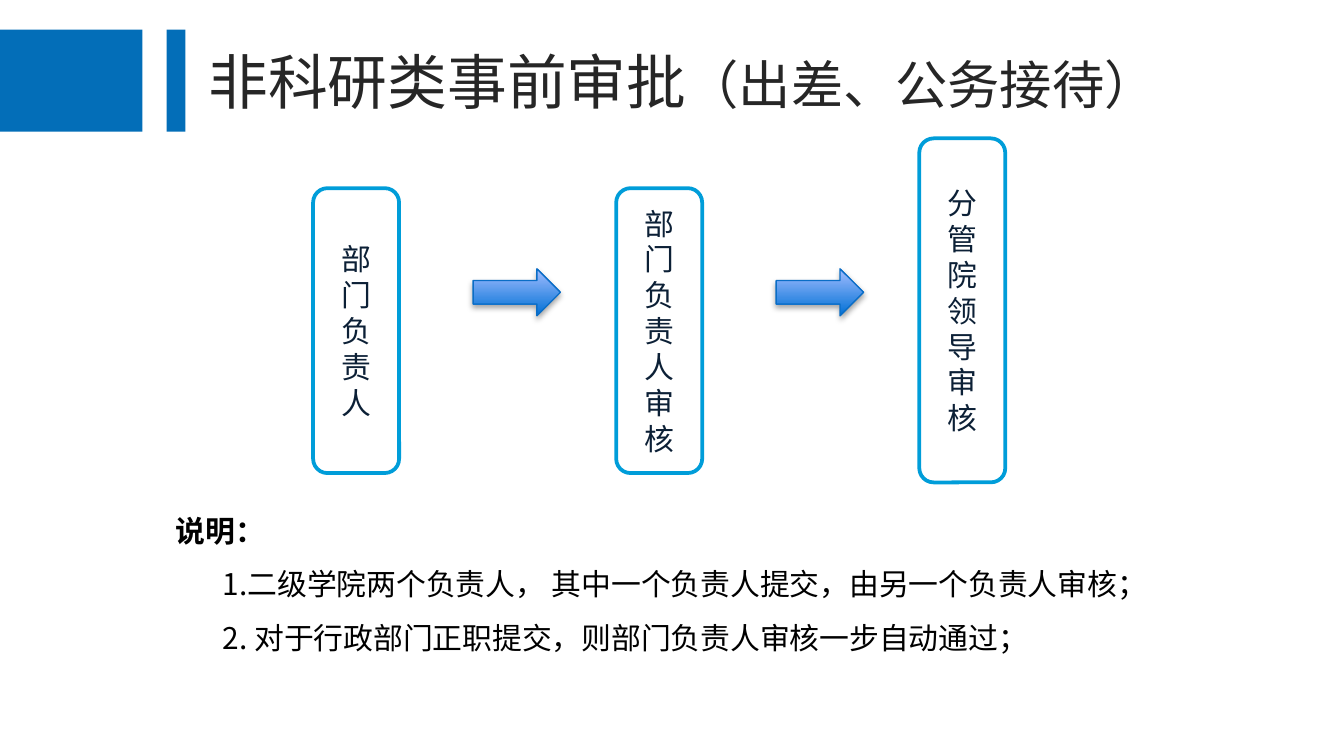
from lxml import etree
from pptx import Presentation
from pptx import util as u
from pptx.dml.color import RGBColor
from pptx.enum import shapes, text
from pptx.oxml import ns

COLORS = {
    "bar": "036EB8", "title": "262626", "white": "FFFFFF", "border": "009DD9",
    "step": "0C2036", "arrow_dark": "0070D5", "arrow_light": "A3BDFF",
    "arrow_line": "0A6DC6", "shadow": "000000", "note": "000000",
}
CJK, LATIN = "Noto Sans CJK SC", "League Spartan"


def color(name):
    return RGBColor.from_string(COLORS[name])


def place(item, left, top, width, height):
    item.left, item.top = u.Inches(left), u.Inches(top)
    item.width, item.height = u.Inches(width), u.Inches(height)


def add_shape(page, kind, left, top, width, height):
    shape = page.shapes.add_shape(kind, *map(u.Inches, (left, top, width, height)))
    shape.shadow.inherit = False
    return shape


def add_span(para, words, size, face, shade, bold=False):
    span = para.add_run()
    span.text = words
    span.font.size, span.font.bold, span.font.name = u.Pt(size), bold, face
    span.font.color.rgb = color(shade)
    east_asian = etree.Element(ns.qn("a:ea"), typeface=face)
    span.font._element.find(ns.qn("a:latin")).addnext(east_asian)


def add_header(page, left, top, width, height):
    for offset, bar_width in ((0, 1.06), (1.24, 0.14)):
        bar = add_shape(page, shapes.MSO_SHAPE.RECTANGLE,
                        left + offset, top, bar_width, height)
        bar.fill.solid()
        bar.fill.fore_color.rgb = color("bar")
        bar.line.fill.background()
    title = page.shapes.title
    place(title, left + 1.45, top + 0.06, width - 1.45, 0.64)
    frame = title.text_frame
    frame.word_wrap = True
    frame.auto_size = text.MSO_AUTO_SIZE.SHAPE_TO_FIT_TEXT
    frame.vertical_anchor = text.MSO_ANCHOR.TOP
    para = frame.paragraphs[0]
    para.alignment = text.PP_ALIGN.LEFT
    add_span(para, "非科研类事前审批", 32, CJK, "title")
    add_span(para, "（出差、公务接待）", 28, CJK, "title")


def add_step(page, words, left, top, width, height):
    box = add_shape(page, shapes.MSO_SHAPE.ROUNDED_RECTANGLE, left, top, width, height)
    box.fill.solid()
    box.fill.fore_color.rgb = color("white")
    box.line.color.rgb = color("border")
    box.line.width = u.Pt(2)
    frame = box.text_frame
    frame.word_wrap = True
    frame.vertical_anchor = text.MSO_ANCHOR.MIDDLE
    para = frame.paragraphs[0]
    para.alignment = text.PP_ALIGN.CENTER
    add_span(para, words, 16, LATIN, "step")


def add_arrow(page, left, top, width, height):
    arrow = add_shape(page, shapes.MSO_SHAPE.RIGHT_ARROW, left, top, width, height)
    arrow.fill.gradient()
    arrow.fill.gradient_angle = 90
    for stop, position, shade in zip(arrow.fill.gradient_stops, (0, 1),
                                     ("arrow_dark", "arrow_light")):
        stop.position = position
        stop.color.rgb = color(shade)
    arrow.line.color.rgb = color("arrow_line")
    arrow.line.width = u.Pt(0.75)
    effects = arrow._element.spPr.find(ns.qn("a:effectLst"))
    shadow = etree.SubElement(effects, ns.qn("a:outerShdw"), blurRad=str(u.Pt(3.1)),
                              dist=str(u.Pt(1.8)), dir="5400000", rotWithShape="0")
    shade = etree.SubElement(shadow, ns.qn("a:srgbClr"), val=COLORS["shadow"])
    etree.SubElement(shade, ns.qn("a:alpha"), val="35000")


def add_flow(page, left, top, width, height):
    steps = (("部门负责人", 0.37, 2.12), ("部门负责人审核", 0.37, 2.12),
             ("分管院领导审核", 0, height))
    step_width = 0.64
    pitch = (width - step_width) / (len(steps) - 1)
    for index, (words, offset, step_height) in enumerate(steps):
        add_step(page, words, left + index * pitch, top + offset, step_width, step_height)
    for index in range(len(steps) - 1):
        add_arrow(page, left + 1.19 + index * pitch, top + 0.97, 0.65, 0.35)


def add_notes(page, left, top, width, height):
    box = page.shapes.add_textbox(*map(u.Inches, (left, top, width, height)))
    frame = box.text_frame
    frame.word_wrap = True
    frame.auto_size = text.MSO_AUTO_SIZE.SHAPE_TO_FIT_TEXT
    lines = ("说明：",
             "1.二级学院两个负责人， 其中一个负责人提交，由另一个负责人审核；",
             "2. 对于行政部门正职提交，则部门负责人审核一步自动通过；")
    for index, words in enumerate(lines):
        para = frame.add_paragraph() if index else frame.paragraphs[0]
        para.line_spacing = 1.5
        if index:
            para._p.get_or_add_pPr().set("marL", str(u.Inches(0.35)))
        add_span(para, words, 16, CJK, "note", bold=index == 0)


def main():
    deck = Presentation()
    deck.slide_width = u.Inches(10)
    deck.slide_height = deck.slide_width * 9 // 16
    page = deck.slides.add_slide(deck.slide_layouts[5])
    add_header(page, 0, 0.22, 9.81, 0.76)
    add_flow(page, 2.33, 1.03, 5.15, 2.56)
    add_notes(page, 1.21, 3.63, 9.65, 1.31)
    deck.save("out.pptx")


if __name__ == "__main__":
    main()
